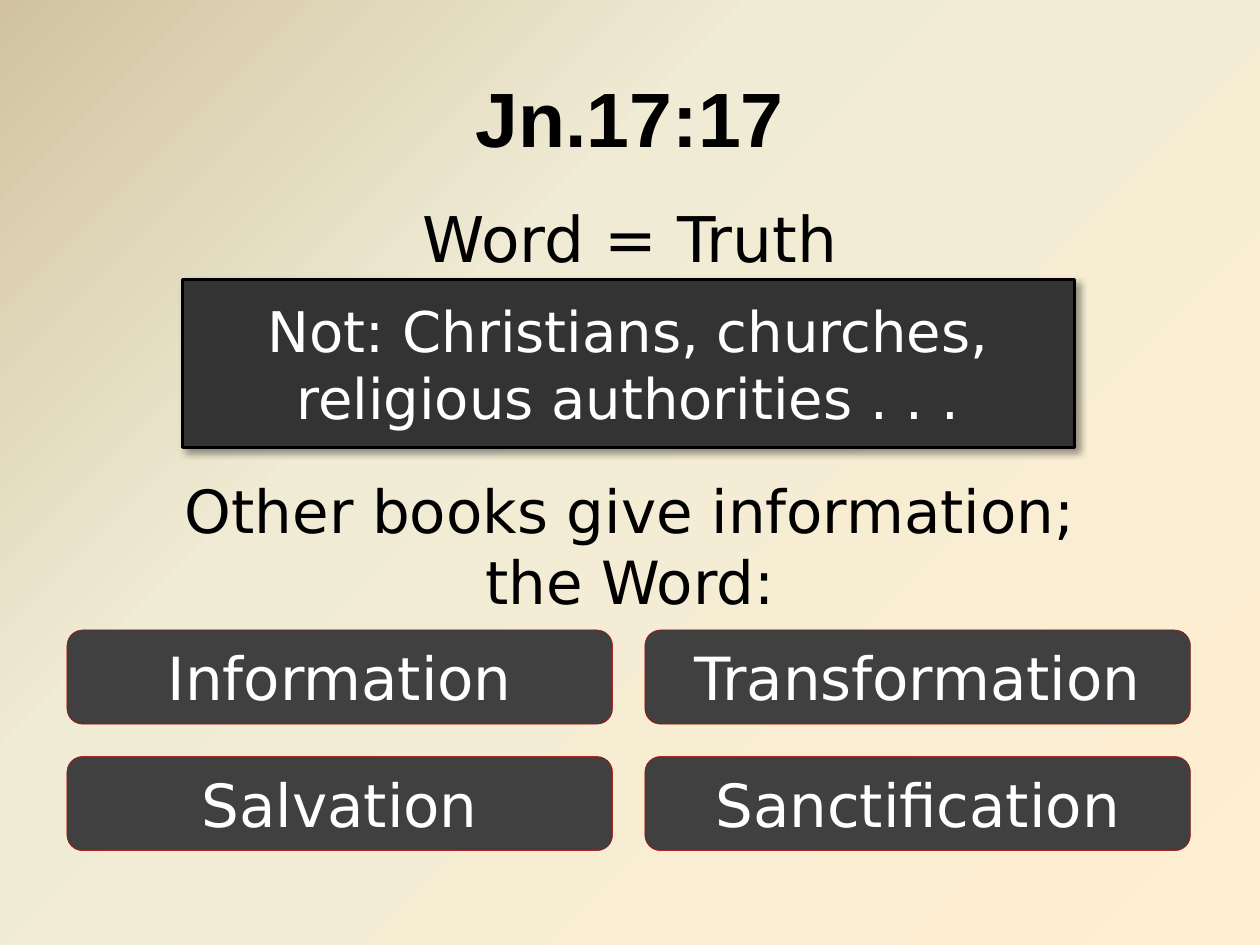
import pptx
import pptx.dml.color
import pptx.enum.shapes
import pptx.enum.text
import pptx.oxml
import pptx.oxml.ns
import pptx.util
from pptx.util import Cm

COLORS = {
    "text": "000000", "light": "FFFFFF", "notice": "333333",
    "button": "404040", "button_line": "C00000", "shadow": "000000",
}
BACKGROUND_STOPS = [(0, "D1C39F"), (35, "F0EBD5"), (100, "FFEFD1")]
BACKGROUND_ANGLE = 45

TEXTS = [
    ("Jn.17:17", (1.27, 0.76, 22.86, 3.18), {"font": "Arial", "size": 44, "bold": True, "middle": True}),
    ("Word = Truth", (1.27, 3.89, 22.86, 1.75), {"size": 36}),
    ("Other books give information;\vthe Word:", (1.27, 9.43, 22.86, 3.1), {"size": 34}),
]
NOTICE = "Not: Christians, churches,\vreligious authorities . . ."
NOTICE_PLACE = (3.68, 5.64, 17.98, 3.38)
BUTTONS = [["Information", "Transformation"], ["Salvation", "Sanctification"]]
BUTTON_LEFT, BUTTON_TOP = 1.35, 12.7
BUTTON_WIDTH, BUTTON_HEIGHT = 11, 1.9
BUTTON_GAP = 0.65

DRAWING = pptx.oxml.ns.nsdecls("a")


def rgb(name):
    return pptx.dml.color.RGBColor.from_string(COLORS[name])


def write_text(shape, text, font="DejaVu Sans", size=34, color="text", bold=False, middle=False):
    frame = shape.text_frame
    frame.word_wrap = True
    anchor = pptx.enum.text.MSO_ANCHOR
    frame.vertical_anchor = anchor.MIDDLE if middle else anchor.TOP
    paragraph = frame.paragraphs[0]
    paragraph.text = text
    paragraph.alignment = pptx.enum.text.PP_ALIGN.CENTER
    for run in paragraph.runs:
        run.font.name = font
        run.font.size = pptx.util.Pt(size)
        run.font.bold = bold
        run.font.color.rgb = rgb(color)


def add_panel(slide, kind, place, fill, line, line_width):
    shape = slide.shapes.add_shape(kind, *map(Cm, place))
    shape.shadow.inherit = False
    shape.fill.solid()
    shape.fill.fore_color.rgb = rgb(fill)
    shape.line.color.rgb = rgb(line)
    shape.line.width = pptx.util.Pt(line_width)
    return shape


def set_background(slide):
    fill = slide.background.fill
    fill.gradient()
    fill.gradient_angle = 360 - BACKGROUND_ANGLE
    stops = "".join(
        f'<a:gs pos="{position * 1000}"><a:srgbClr val="{color}"/></a:gs>'
        for position, color in BACKGROUND_STOPS
    )
    stop_list = slide.background._cSld.find(".//" + pptx.oxml.ns.qn("a:gsLst"))
    stop_list.getparent().replace(
        stop_list, pptx.oxml.parse_xml(f"<a:gsLst {DRAWING}>{stops}</a:gsLst>")
    )


def add_shadow(shape, blur, distance, angle, opacity):
    effects = shape.element.spPr.find(pptx.oxml.ns.qn("a:effectLst"))
    effects.append(pptx.oxml.parse_xml(
        f'<a:outerShdw {DRAWING} blurRad="{pptx.util.Pt(blur)}" dist="{pptx.util.Pt(distance)}" '
        f'dir="{angle * 60000}" algn="tl" rotWithShape="0"><a:srgbClr val="{COLORS["shadow"]}">'
        f'<a:alpha val="{opacity * 1000}"/></a:srgbClr></a:outerShdw>'
    ))


def main():
    presentation = pptx.Presentation()
    presentation.slide_width, presentation.slide_height = Cm(25.4), Cm(19.05)
    slide = presentation.slides.add_slide(presentation.slide_layouts[6])
    set_background(slide)

    for text, place, style in TEXTS:
        write_text(slide.shapes.add_textbox(*map(Cm, place)), text, **style)

    kinds = pptx.enum.shapes.MSO_SHAPE
    notice = add_panel(slide, kinds.RECTANGLE, NOTICE_PLACE, "notice", "text", 2)
    add_shadow(notice, blur=4, distance=3, angle=45, opacity=40)
    write_text(notice, NOTICE, size=32, color="light", middle=True)

    for row, labels in enumerate(BUTTONS):
        for column, label in enumerate(labels):
            left = BUTTON_LEFT + column * (BUTTON_WIDTH + BUTTON_GAP)
            top = BUTTON_TOP + row * (BUTTON_HEIGHT + BUTTON_GAP)
            place = (left, top, BUTTON_WIDTH, BUTTON_HEIGHT)
            button = add_panel(slide, kinds.ROUNDED_RECTANGLE, place, "button", "button_line", 0.25)
            write_text(button, label, color="light", middle=True)

    presentation.save("out.pptx")


if __name__ == "__main__":
    main()
